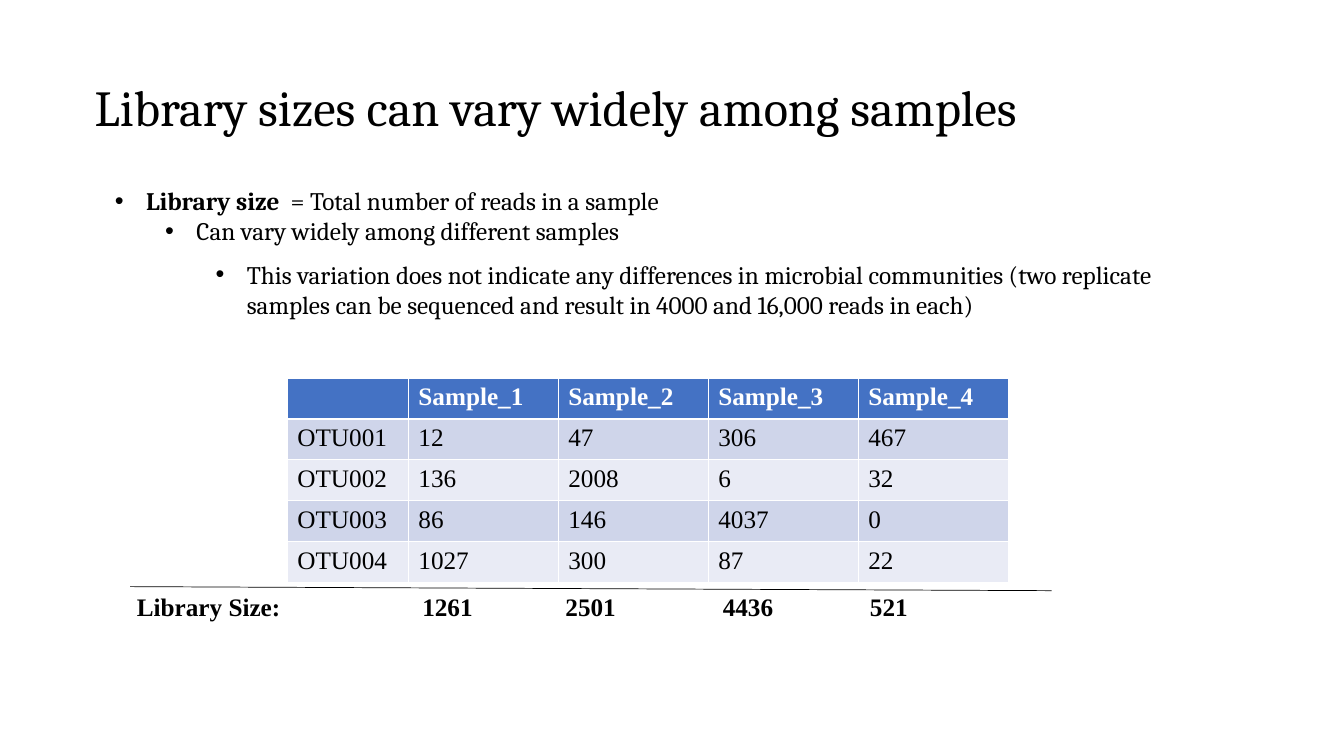
from pptx import Presentation
from pptx import util as u
from pptx.dml.color import RGBColor
from pptx.enum import shapes, text
from pptx.oxml.ns import qn
from lxml import etree

BLACK = RGBColor(0, 0, 0)
WHITE = RGBColor(255, 255, 255)
HEADER = RGBColor(0x44, 0x72, 0xC4)
BANDS = RGBColor(0xE9, 0xEB, 0xF5), RGBColor(0xCF, 0xD5, 0xEA)
SERIF, TIMES = "Cambria", "Times New Roman"

COUNTS = [
    ("OTU001", 12, 47, 306, 467),
    ("OTU002", 136, 2008, 6, 32),
    ("OTU003", 86, 146, 4037, 0),
    ("OTU004", 1027, 300, 87, 22),
]
SAMPLES = [f"Sample_{n}" for n in range(1, 5)]
TOTALS = [sum(column) for column in list(zip(*COUNTS))[1:]]


def add_run(p, words, font, size=18, bold=False, color=BLACK):
    """Append one styled run to a paragraph."""
    r = p.add_run()
    r.text = words
    r.font.name, r.font.size, r.font.bold = font, u.Pt(size), bold
    r.font.color.rgb = color


def add_box(s, left, top, width, height, wrap=True):
    """Add an empty text box and return its text frame."""
    tf = s.shapes.add_textbox(*map(u.Inches, (left, top, width, height))).text_frame
    tf.word_wrap = wrap
    return tf


def add_bullet(p, level, runs):
    """Fill a paragraph as a bullet indented by its level."""
    p.level = level
    pPr = p._p.get_or_add_pPr()
    pPr.set("marL", str(u.Inches(0.31 + level / 2)))
    pPr.set("indent", str(u.Inches(-0.31)))
    etree.SubElement(pPr, qn("a:buFont")).set("typeface", "Arial")
    etree.SubElement(pPr, qn("a:buChar")).set("char", "•")
    for words, bold in runs:
        add_run(p, words, SERIF, bold=bold)


def add_title(s, left, top, width, height):
    """Place the slide title at the bottom of its box."""
    tf = add_box(s, left, top, width, height)
    tf.vertical_anchor = text.MSO_ANCHOR.BOTTOM
    p = tf.paragraphs[0]
    p.line_spacing = 0.9
    add_run(p, "Library sizes can vary widely among samples", SERIF, 36)


def add_definition(s, left, top, width, height):
    """Place the definition bullets and the remark below them."""
    tf = add_box(s, left, top, width, height)
    add_bullet(tf.paragraphs[0], 0, [
        ("Library size", True), ("  = Total number of reads in a sample", False)])
    add_bullet(tf.add_paragraph(), 1, [("Can vary widely among different samples", False)])
    tf = add_box(s, left, top + height + 0.02, width + 0.54, height)
    add_bullet(tf.paragraphs[0], 2, [(
        "This variation does not indicate any differences in microbial communities "
        "(two replicate samples can be sequenced and result in 4000 and 16,000 reads in each)",
        False)])


def add_counts(s, left, top, width, height):
    """Place the table of read counts per OTU and sample."""
    rows = [("", *SAMPLES), *COUNTS]
    table = s.shapes.add_table(
        len(rows), len(rows[0]), *map(u.Inches, (left, top, width, height))).table
    label_width = 1.2
    for i, column in enumerate(table.columns):
        column.width = u.Inches((width - label_width) / len(SAMPLES) if i else label_width)
    for i, row in enumerate(rows):
        for j, value in enumerate(row):
            cell = table.cell(i, j)
            cell.fill.solid()
            cell.fill.fore_color.rgb = BANDS[i % 2] if i else HEADER
            add_run(cell.text_frame.paragraphs[0], str(value), TIMES,
                    bold=i == 0, color=BLACK if i else WHITE)


def add_totals(s, left, top, width, height):
    """Place the sum line and the library size of each sample."""
    line = s.shapes.add_connector(
        shapes.MSO_CONNECTOR.STRAIGHT, u.Inches(left + 0.03), u.Inches(top),
        u.Inches(left + width), u.Inches(top + 0.04))
    line.line.color.rgb = BLACK
    line.line.width = u.Pt(0.5)
    etree.SubElement(line._element.spPr, qn("a:effectLst"))
    labels = ["Library Size:", *map(str, TOTALS)]
    offsets = [0, 2.83, 4.25, 5.81, 7.27]
    widths = [1.64, 0.71, 0.71, 0.71, 0.58]
    for label, offset, label_width in zip(labels, offsets, widths):
        tf = add_box(s, left + offset, top, label_width, height, wrap=False)
        add_run(tf.paragraphs[0], label, TIMES, bold=True)


def main():
    """Build and save the slide."""
    prs = Presentation()
    prs.slide_width, prs.slide_height = u.Inches(13.33), u.Inches(7.5)
    s = prs.slides.add_slide(prs.slide_layouts[6])
    add_title(s, 0.84, 0.6, 9.71, 0.81)
    add_definition(s, 1.04, 1.79, 10.71, 0.71)
    add_counts(s, 2.85, 3.75, 7.15, 2.03)
    add_totals(s, 1.26, 5.82, 9.17, 0.4)
    prs.save("out.pptx")


if __name__ == "__main__":
    main()
